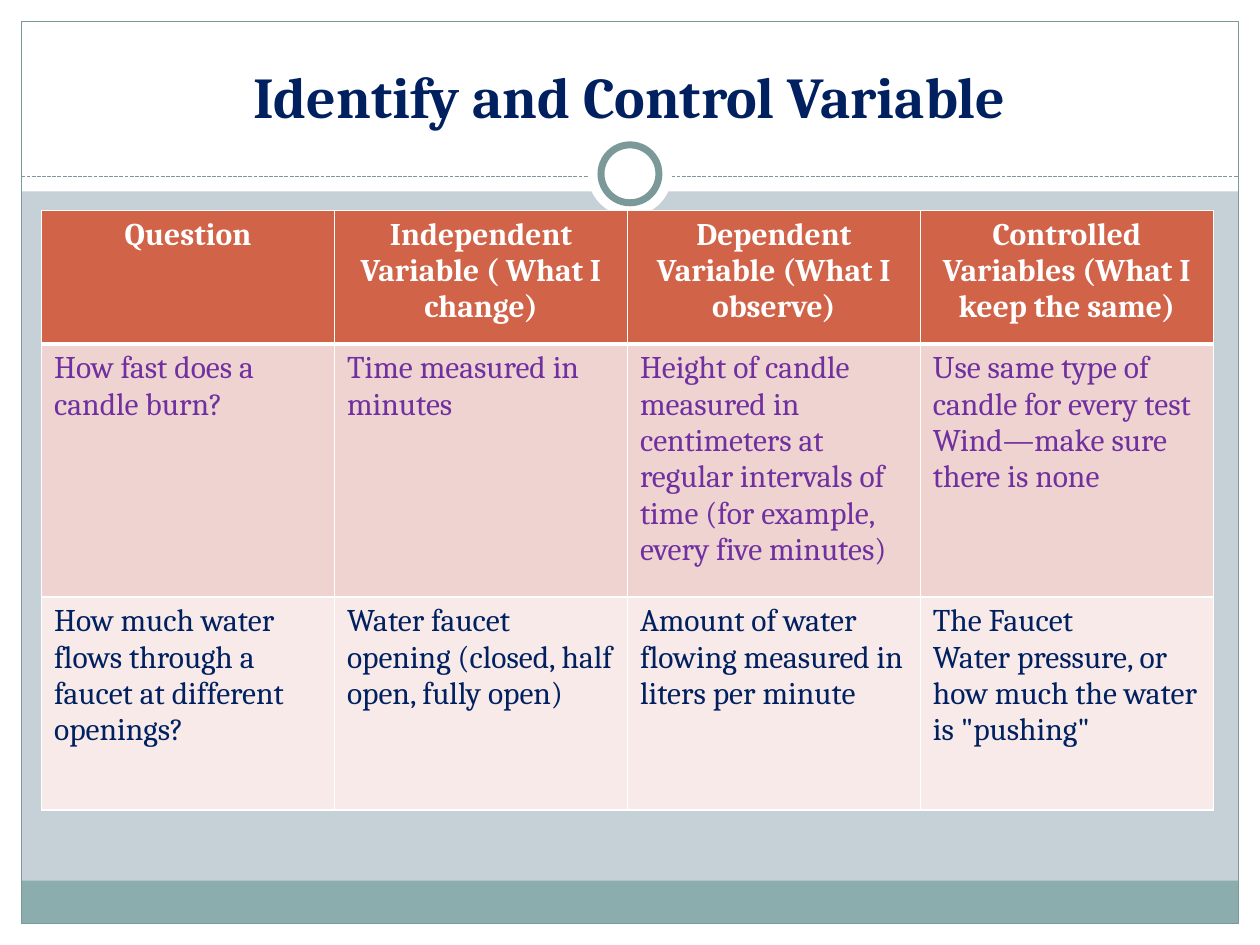
"""Build a slide with a table of experiment variables."""
from lxml import etree
from pptx import Presentation
from pptx.dml.color import RGBColor
from pptx.enum.dml import MSO_LINE
from pptx.enum.shapes import MSO_CONNECTOR, MSO_SHAPE
from pptx.enum.text import MSO_ANCHOR, PP_ALIGN
from pptx.oxml.ns import qn
from pptx.util import Inches, Pt

RECT, OVAL = MSO_SHAPE.RECTANGLE, MSO_SHAPE.OVAL
STRAIGHT = MSO_CONNECTOR.STRAIGHT
DASH = MSO_LINE.SQUARE_DOT
LEFT, CENTER = PP_ALIGN.LEFT, PP_ALIGN.CENTER
BOTTOM = MSO_ANCHOR.BOTTOM
FONT = "Cambria"
COLORS = {
    "back": "C5D1D7", "white": "FFFFFF", "band": "8CADAE", "edge": "7C999A",
    "navy": "002060", "purple": "7030A0", "head": "D16349",
    "rose": "EED3D0", "pale": "F7EAE9",
}
ROWS = [
    ["Question", "Independent Variable ( What I change)",
     "Dependent Variable (What I observe)",
     "Controlled Variables (What I keep the same)"],
    ["How fast does a candle burn?", "Time measured in minutes",
     "Height of candle measured in centimeters at regular intervals of time "
     "(for example, every five minutes)",
     "Use same type of candle for every test\nWind—make sure there is none"],
    ["How much water flows through a faucet at different openings?",
     "Water faucet opening (closed, half open, fully open)",
     "Amount of water flowing measured in liters per minute",
     'The Faucet\nWater pressure, or how much the water is "pushing"'],
]
LOOKS = [
    {"fill": "head", "ink": "white", "bold": True, "align": CENTER},
    {"fill": "rose", "ink": "purple", "bold": False, "align": LEFT},
    {"fill": "pale", "ink": "navy", "bold": False, "align": LEFT},
]


class Deck:
    """Hold the style and the current slide."""

    def __init__(self, width, height):
        self.prs = Presentation()
        self.prs.slide_width, self.prs.slide_height = Inches(width), Inches(height)
        self.slide = self.prs.slides.add_slide(self.prs.slide_layouts[5])
        self.shapes = self.slide.shapes
        self.paint(self.slide.background.fill, "back")

    def color(self, name):
        return RGBColor.from_string(COLORS[name])

    def paint(self, fill, name):
        fill.solid()
        fill.fore_color.rgb = self.color(name)

    def text(self, frame, words, ink, size, bold, align):
        frame.text = words
        style = {"name": FONT, "size": Pt(size), "bold": bold}
        for para in frame.paragraphs:
            para.alignment = align
            for run in para.runs:
                run.font.color.rgb = self.color(ink)
                for key, value in style.items():
                    setattr(run.font, key, value)

    def shape(self, kind, box, fill=None, line=None, width=0.75):
        item = self.shapes.add_shape(kind, *map(Inches, box))
        item.shadow.inherit = False
        if fill:
            self.paint(item.fill, fill)
        else:
            item.fill.background()
        if line:
            item.line.color.rgb = self.color(line)
            item.line.width = Pt(width)
        else:
            item.line.fill.background()

    def rule(self, start, end, name):
        item = self.shapes.add_connector(STRAIGHT, *map(Inches, start + end))
        item.line.color.rgb = self.color(name)
        item.line.width = Pt(0.75)
        item.line.dash_style = DASH
        etree.SubElement(item._element.spPr, qn("a:effectLst"))

    def title(self, words, box):
        item = self.shapes.title
        for key, value in zip(("left", "top", "width", "height"), box):
            setattr(item, key, Inches(value))
        frame = item.text_frame
        frame.vertical_anchor = BOTTOM
        self.text(frame, words, "navy", 33, True, CENTER)
        self.shapes._spTree.append(item._element)

    def border(self, cell, side, width):
        props = cell._tc.get_or_add_tcPr()
        line = etree.SubElement(props, qn(f"a:ln{side}"), w=str(Pt(width)))
        fill = etree.SubElement(line, qn("a:solidFill"))
        etree.SubElement(fill, qn("a:srgbClr"), val=COLORS["white"])

    def table(self, rows, looks, box, heights):
        size = len(rows), len(rows[0])
        table = self.shapes.add_table(*size, *map(Inches, box)).table
        for r, (texts, look, height) in enumerate(zip(rows, looks, heights)):
            table.rows[r].height = Inches(height)
            for c, words in enumerate(texts):
                cell = table.cell(r, c)
                for side in "LRTB":
                    thick = (r, side) in ((0, "B"), (1, "T"))
                    self.border(cell, side, 3 if thick else 1)
                self.paint(cell.fill, look["fill"])
                self.text(cell.text_frame, words, look["ink"], 18,
                          look["bold"], look["align"])


def main():
    wide, high, edge = 10, 7.5, 0.17
    mid, rule = wide / 2, 1.4
    deck = Deck(wide, high)
    for box in ((0, high - edge, wide, edge), (0, 0, wide, 1.52),
                (0, 0, edge, high), (wide - edge, 0, edge, high)):
        deck.shape(RECT, box, "white")
    inner = wide - 2 * edge
    deck.shape(RECT, (edge, 6.99, inner, 0.34), "band")
    deck.shape(RECT, (edge, edge, inner, high - 2 * edge), line="edge")
    deck.rule((edge, rule), (wide - edge, rule), "edge")
    for size, line in ((0.67, None), (0.46, "edge")):
        box = (mid - size / 2, 1.38 - size / 2, size, size)
        deck.shape(OVAL, box, "white", line, 4)
    deck.title("Identify and Control Variable", (0.33, 0.25, 9.33, 0.83))
    deck.table(ROWS, LOOKS, (0.33, 1.67, 9.3, 4.75), (1.06, 2.01, 1.69))
    deck.prs.save("out.pptx")


if __name__ == "__main__":
    main()
